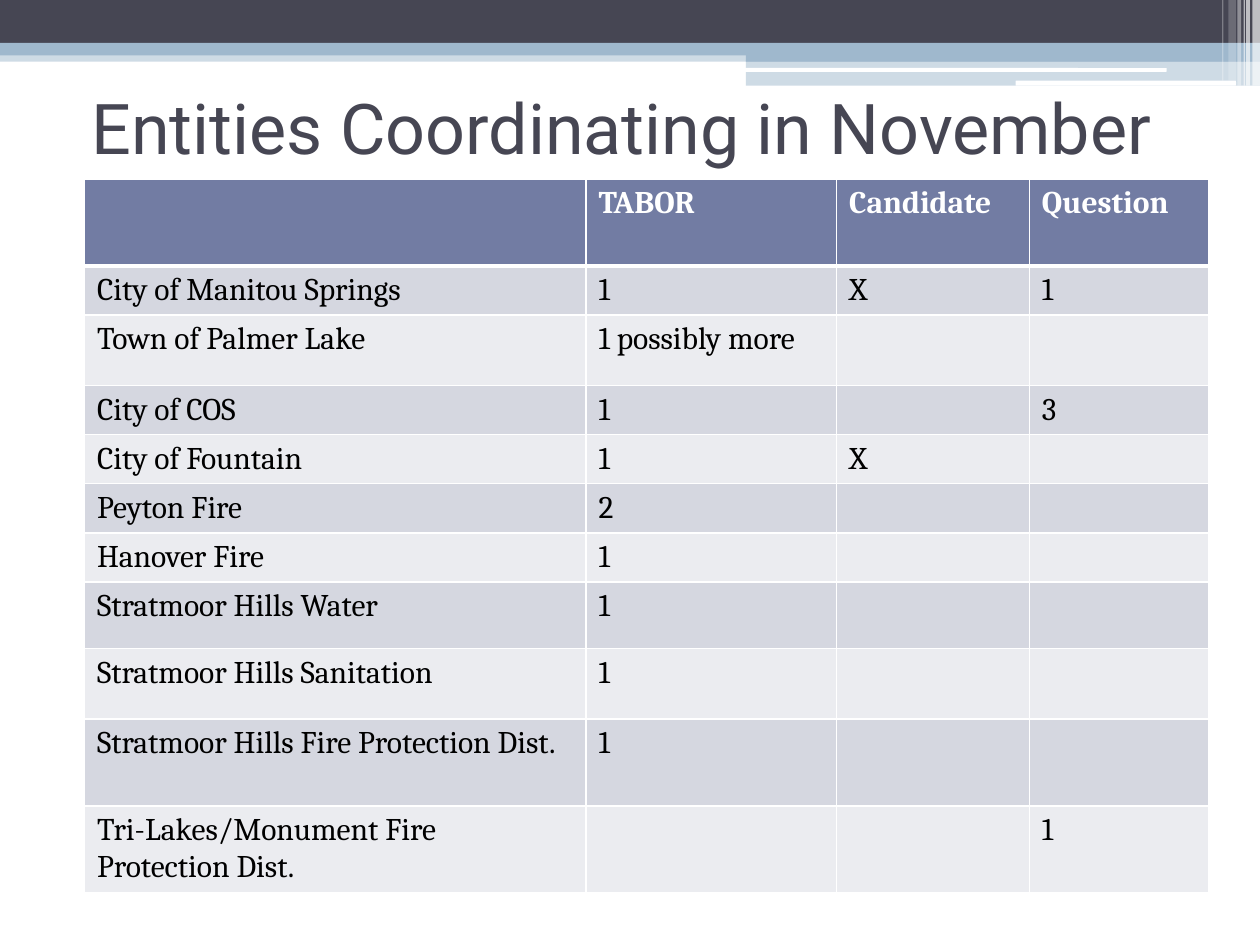
from lxml.etree import SubElement
from pptx import Presentation
from pptx.dml.color import RGBColor
from pptx.enum.shapes import MSO_SHAPE
from pptx.enum.text import MSO_ANCHOR, PP_ALIGN
from pptx.oxml import parse_xml
from pptx.oxml.ns import nsdecls, qn
from pptx.util import Inches, Pt

COLORS = {"dark": "464653", "blue": "9FB8CD", "white": "FFFFFF", "black": "000000",
          "header": "727CA3", "odd": "D5D7E0", "even": "EBECF0"}
COLS, ROWS = 100, 75

BANDS = [
    (0, 4, 100, 0.9, "blue", 50),
    (0, 0, 100, 3.4, "dark", 100),
    (0, 3.4, 100, 1, "blue", 100),
    (59.2, 3.9, 40.8, 1, "blue", 100),
    (59.2, 4.8, 40.8, 2, "blue", 50),
]
RULES = [(59.1, 5.4, 33.5, 0.3), (80.6, 6.4, 17.5, 0.4)]
STRIPES = [(99.4, 0.6, 6.8, 65), (98.9, 0.3, 6.8, 65), (98.7, 0.1, 6.8, 60),
           (98.2, 0.3, 6.8, 40), (97.5, 0.6, 6.4, 20), (97, 0.1, 6.4, 30)]

COL_WIDTHS = [39.8, 19.9, 15.3, 14.2]
ROW_HEIGHTS = [6.9, 3.9, 5.6, 3.9, 3.9, 3.9, 3.9, 5.3, 5.6, 6.9, 6.9]
ENTITIES = [
    ("", "TABOR", "Candidate", "Question"),
    ("City of Manitou Springs", "1", "X", "1"),
    ("Town of Palmer Lake", "1 possibly more", "", ""),
    ("City of COS", "1", "", "3"),
    ("City of Fountain", "1", "X", ""),
    ("Peyton Fire", "2", "", ""),
    ("Hanover Fire", "1", "", ""),
    ("Stratmoor Hills Water", "1", "", ""),
    ("Stratmoor Hills Sanitation", "1", "", ""),
    ("Stratmoor Hills Fire Protection Dist.", "1", "", ""),
    ("Tri-Lakes/Monument Fire Protection Dist.", "", "", "1"),
]


class Deck:
    """Holds the style and the current slide, and adds elements on a 100 by 75 grid."""

    title_font, body_font = "Roboto", "Cambria"

    def __init__(self, prs):
        self.prs = prs
        self.s = prs.slides.add_slide(prs.slide_layouts[5])

    def x(self, cols):
        return round(self.prs.slide_width * cols / COLS)

    def y(self, rows):
        return round(self.prs.slide_height * rows / ROWS)

    def box(self, left, top, width, height):
        return self.x(left), self.y(top), self.x(width), self.y(height)

    def paint(self, fill, color):
        fill.solid()
        fill.fore_color.rgb = RGBColor.from_string(COLORS[color])

    def style(self, p, font, size, color, bold=False):
        p.font.name, p.font.size, p.font.bold = font, Pt(size), bold
        p.font.color.rgb = RGBColor.from_string(COLORS[color])

    def bar(self, left, top, width, height, color, opacity=100, kind=MSO_SHAPE.RECTANGLE):
        sp = self.s.shapes.add_shape(kind, *self.box(left, top, width, height))
        sp.shadow.inherit = False
        sp.line.fill.background()
        self.paint(sp.fill, color)
        if opacity < 100:
            clr = sp.fill._xPr.find(qn("a:solidFill"))[0]
            SubElement(clr, qn("a:alpha"), val=str(opacity * 1000))

    def title(self, text, *place):
        sp = self.s.shapes.title
        sp.left, sp.top, sp.width, sp.height = self.box(*place)
        tf = sp.text_frame
        tf.text, tf.word_wrap, tf.vertical_anchor = text, True, MSO_ANCHOR.MIDDLE
        p = tf.paragraphs[0]
        p.alignment = PP_ALIGN.CENTER
        self.style(p, self.title_font, 40, "dark")

    def borders(self, cell, bottom, top):
        tc_pr = cell._tc.get_or_add_tcPr()
        for i, (side, width) in enumerate(zip("LRTB", (1, 1, top, bottom))):
            tc_pr.insert(i, parse_xml(
                f'<a:ln{side} {nsdecls("a")} w="{Pt(width)}"><a:solidFill>'
                f'<a:srgbClr val="{COLORS["white"]}"/></a:solidFill></a:ln{side}>'))

    def table(self, left, top, widths, heights, rows):
        place = self.box(left, top, sum(widths), sum(heights))
        table = self.s.shapes.add_table(len(rows), len(widths), *place).table
        for col, width in zip(table.columns, widths):
            col.width = self.x(width)
        for i, (row, height, texts) in enumerate(zip(table.rows, heights, rows)):
            row.height = self.y(height)
            header = i == 0
            for cell, text in zip(row.cells, texts):
                cell.text = text
                self.style(cell.text_frame.paragraphs[0], self.body_font, 18,
                           "white" if header else "black", header)
                self.paint(cell.fill, "header" if header else ("even", "odd")[i % 2])
                self.borders(cell, 3 if header else 1, 3 if i == 1 else 1)


def main():
    prs = Presentation()
    prs.slide_width, prs.slide_height = Inches(10), Inches(7.5)
    deck = Deck(prs)
    for band in BANDS:
        deck.bar(*band)
    for rule in RULES:
        deck.bar(*rule, "white", kind=MSO_SHAPE.ROUNDED_RECTANGLE)
    for left, width, height, opacity in STRIPES:
        deck.bar(left, 0, width, height, "white", opacity)
    deck.title("Entities Coordinating in November ", 5, 4.2, 90, 11.7)
    deck.table(6.7, 14.2, COL_WIDTHS, ROW_HEIGHTS, ENTITIES)
    prs.save("out.pptx")


if __name__ == "__main__":
    main()
